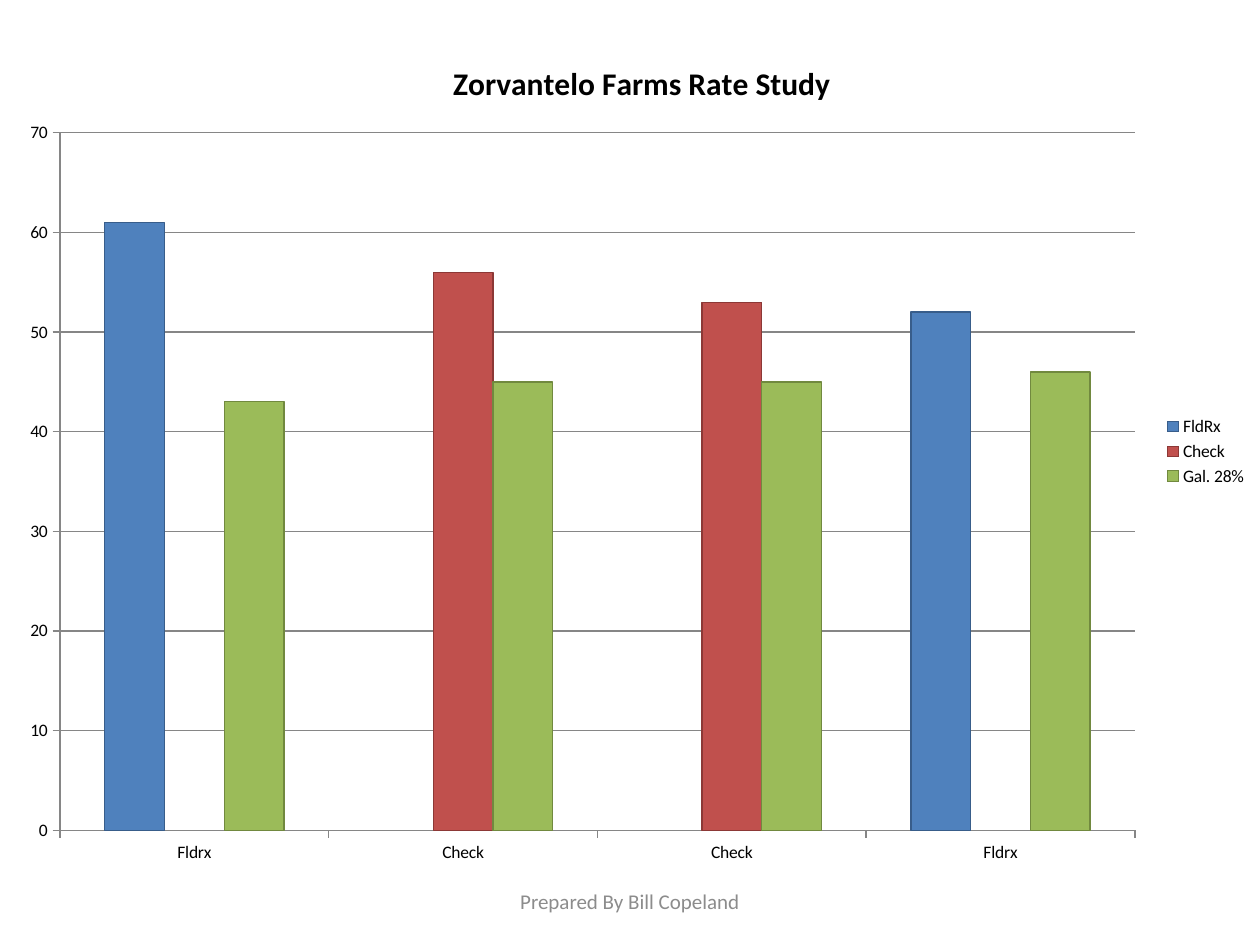
from dataclasses import dataclass

from lxml.etree import SubElement
from pptx import Presentation
from pptx.chart.data import CategoryChartData
from pptx.dml.color import RGBColor
from pptx.enum.chart import XL_CHART_TYPE, XL_LEGEND_POSITION, XL_TICK_MARK
from pptx.enum.text import MSO_ANCHOR, PP_ALIGN
from pptx.oxml.ns import qn
from pptx.util import Pt

PX = 914400 / 126


@dataclass(frozen=True)
class Theme:
    font: str = "Calibri"
    text: str = "000000"
    footer: str = "8C8C8C"
    line: str = "868686"
    title_size: int = 18
    footer_size: int = 12
    chart_size: int = 10


theme = Theme()


def format_text(target, text, *, size, color, bold=False):
    """Put text in the first paragraph of a text frame, centred."""
    paragraph = target.paragraphs[0]
    paragraph.alignment = PP_ALIGN.CENTER
    run = paragraph.add_run()
    run.text = text
    run.font.name = theme.font
    run.font.size = Pt(size)
    run.font.bold = bold
    run.font.color.rgb = RGBColor.from_string(color)


def set_layout(element, index, **fractions):
    """Place a chart part by fractions of the chart's width and height."""
    for old_layout in element.findall(qn("c:layout")):
        element.remove(old_layout)
    layout = SubElement(element, qn("c:layout"))
    element.insert(index, layout)
    manual = SubElement(layout, qn("c:manualLayout"))
    if "w" in fractions:
        SubElement(manual, qn("c:layoutTarget")).set("val", "inner")
    for name in ("x", "y"):
        SubElement(manual, qn(f"c:{name}Mode")).set("val", "edge")
    for name, value in fractions.items():
        SubElement(manual, qn(f"c:{name}")).set("val", str(value))


presentation = Presentation()
presentation.slide_width = round(1260 * PX)
presentation.slide_height = round(945 * PX)
slide = presentation.slides.add_slide(presentation.slide_layouts[6])

# Footer
left, top, width, height = (round(n * PX) for n in (430, 876, 400, 50))
footer = slide.shapes.add_textbox(left, top, width, height).text_frame
footer.word_wrap = True
footer.vertical_anchor = MSO_ANCHOR.MIDDLE
format_text(footer, "Prepared By Bill Copeland", size=theme.footer_size, color=theme.footer)

# Chart: name, values, fill, outline
rate_series = [
    ("FldRx", (61, None, None, 52), "4F81BD", "385D8A"),
    ("Check", (None, 56, 53, None), "C0504D", "8C3836"),
    ("Gal. 28%", (43, 45, 45, 46), "9BBB59", "71893F"),
]
chart_data = CategoryChartData()
chart_data.categories = ["Fldrx", "Check", "Check", "Fldrx"]
for name, values, _, _ in rate_series:
    chart_data.add_series(name, values)

left, top, width, height = (round(n * PX) for n in (10, 21, 1250, 861))
chart = slide.shapes.add_chart(
    XL_CHART_TYPE.COLUMN_CLUSTERED, left, top, width, height, chart_data
).chart
chart.font.name = theme.font
chart.font.size = Pt(theme.chart_size)
chart.font.color.rgb = RGBColor.from_string(theme.text)

chart.has_title = True
title = chart.chart_title
format_text(
    title.text_frame, "Zorvantelo Farms Rate Study",
    size=theme.title_size, color=theme.text, bold=True,
)
title.include_in_layout = False
set_layout(title._element, 1, x=0.35, y=0.04)

chart.has_legend = True
chart.legend.position = XL_LEGEND_POSITION.RIGHT
chart.legend.include_in_layout = False

plot = chart.plots[0]
plot.vary_by_categories = False
plot.gap_width = 150
plot.overlap = 0
for series, (_, _, fill, outline) in zip(plot.series, rate_series):
    series.invert_if_negative = False
    series.format.fill.solid()
    series.format.fill.fore_color.rgb = RGBColor.from_string(fill)
    series.format.line.color.rgb = RGBColor.from_string(outline)
    series.format.line.width = Pt(0.75)

value_axis = chart.value_axis
value_axis.minimum_scale = 0
value_axis.maximum_scale = 70
value_axis.major_unit = 10
value_axis.has_major_gridlines = True
axis_lines = [value_axis.major_gridlines.format.line]
for axis in (chart.category_axis, value_axis):
    axis.major_tick_mark = XL_TICK_MARK.OUTSIDE
    axis.minor_tick_mark = XL_TICK_MARK.NONE
    axis_lines.append(axis.format.line)
for line in axis_lines:
    line.color.rgb = RGBColor.from_string(theme.line)
    line.width = Pt(0.75)

plot_area = chart._chartSpace.find(f"{qn('c:chart')}/{qn('c:plotArea')}")
set_layout(plot_area, 0, x=0.04, y=0.13, w=0.86, h=0.81)

presentation.save("out.pptx")
